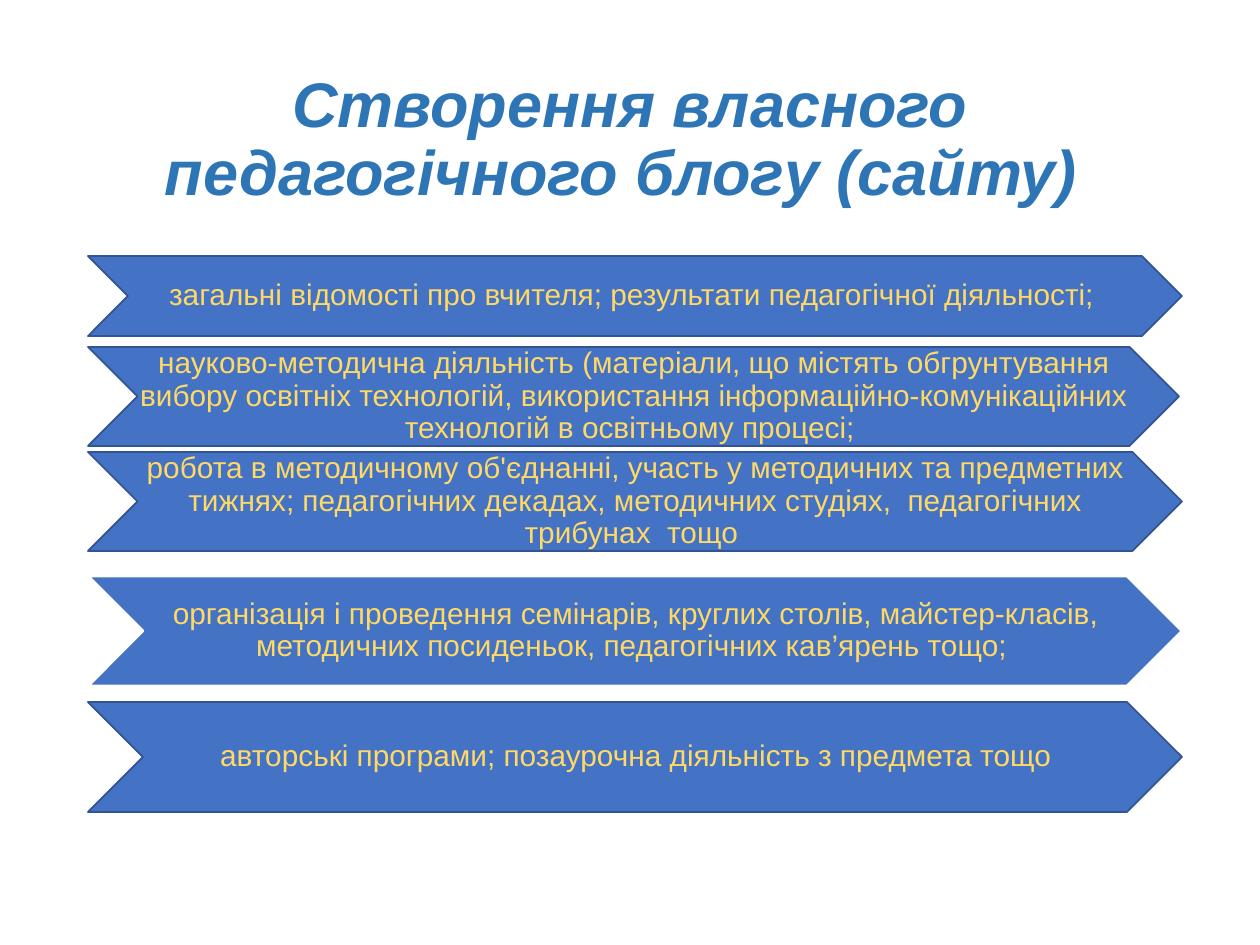
from pptx import Presentation
from pptx.dml.color import RGBColor
from pptx.enum.shapes import MSO_SHAPE as Preset
from pptx.enum.text import MSO_ANCHOR as Anchor, PP_ALIGN as Align
from pptx.util import Emu, Pt

PX_PER_INCH = 126
ROW_LEFT = 88
TITLE = "Cтворення власного педагогічного блогу (сайту) "
TITLE_FONT = {"name": "Arial", "size": Pt(36), "bold": True, "italic": True}
ROW_FONT = {"name": "Arial", "size": Pt(17)}
ROW_INSETS = {"margin_left": 2, "margin_top": 1, "margin_right": 0, "margin_bottom": 1}
NAVY_LINE = ("325491", 1)
WHITE_LINE = ("FFFFFF", 1.5)
ROWS = [
    (256, 1094, 80, NAVY_LINE,
     "загальні відомості про вчителя; результати педагогічної діяльності; "),
    (347, 1091, 99, NAVY_LINE,
     "науково-методична діяльність (матеріали, що містять обгрунтування вибору "
     "освітніх технологій, використання інформаційно-комунікаційних технологій "
     "в освітньому процесі; "),
    (452, 1094, 99, NAVY_LINE,
     "робота в методичному об'єднанні, участь у методичних та предметних тижнях; "
     "педагогічних декадах, методичних студіях,  педагогічних трибунах  тощо "),
    (576, 1094, 110, WHITE_LINE,
     "організація і проведення семінарів, круглих столів, майстер-класів, "
     "методичних посиденьок, педагогічних кав’ярень тощо; "),
    (702, 1094, 110, NAVY_LINE,
     "авторські програми; позаурочна діяльність з предмета тощо"),
]


def px(length):
    return Emu(round(length * 914400 / PX_PER_INCH))


def color(value):
    return RGBColor.from_string(value)


def apply_format(target, values):
    for name, value in values.items():
        setattr(target, name, value)


def add_text(page, bounds, text, font, text_color, insets):
    box = page.shapes.add_textbox(*map(px, bounds))
    frame = box.text_frame
    frame.word_wrap = True
    frame.vertical_anchor = Anchor.MIDDLE
    apply_format(frame, {name: px(inset) for name, inset in insets.items()})
    para = frame.paragraphs[0]
    apply_format(para, {"alignment": Align.CENTER, "line_spacing": 0.9})
    span = para.add_run()
    span.text = text
    apply_format(span.font, font)
    span.font.color.rgb = color(text_color)


def add_chevron(page, bounds, line):
    chevron = page.shapes.add_shape(Preset.CHEVRON, *map(px, bounds))
    chevron.shadow.inherit = False
    chevron.fill.solid()
    chevron.fill.fore_color.rgb = color("4472C4")
    line_color, line_width = line
    chevron.line.color.rgb = color(line_color)
    chevron.line.width = Pt(line_width)


def add_row(page, top, width, height, line, text):
    add_chevron(page, (ROW_LEFT, top, width, height), line)
    text_bounds = (ROW_LEFT + height // 2, top, width - height, height)
    add_text(page, text_bounds, text, ROW_FONT, "FFD966", ROW_INSETS)


def main():
    deck = Presentation()
    apply_format(deck, {"slide_width": px(1260), "slide_height": px(945)})
    page = deck.slides.add_slide(deck.slide_layouts[6])
    add_text(page, (87, 50, 1086, 183), TITLE, TITLE_FONT, "2E75B6", {})
    for row in ROWS:
        add_row(page, *row)
    deck.save("out.pptx")


if __name__ == "__main__":
    main()
